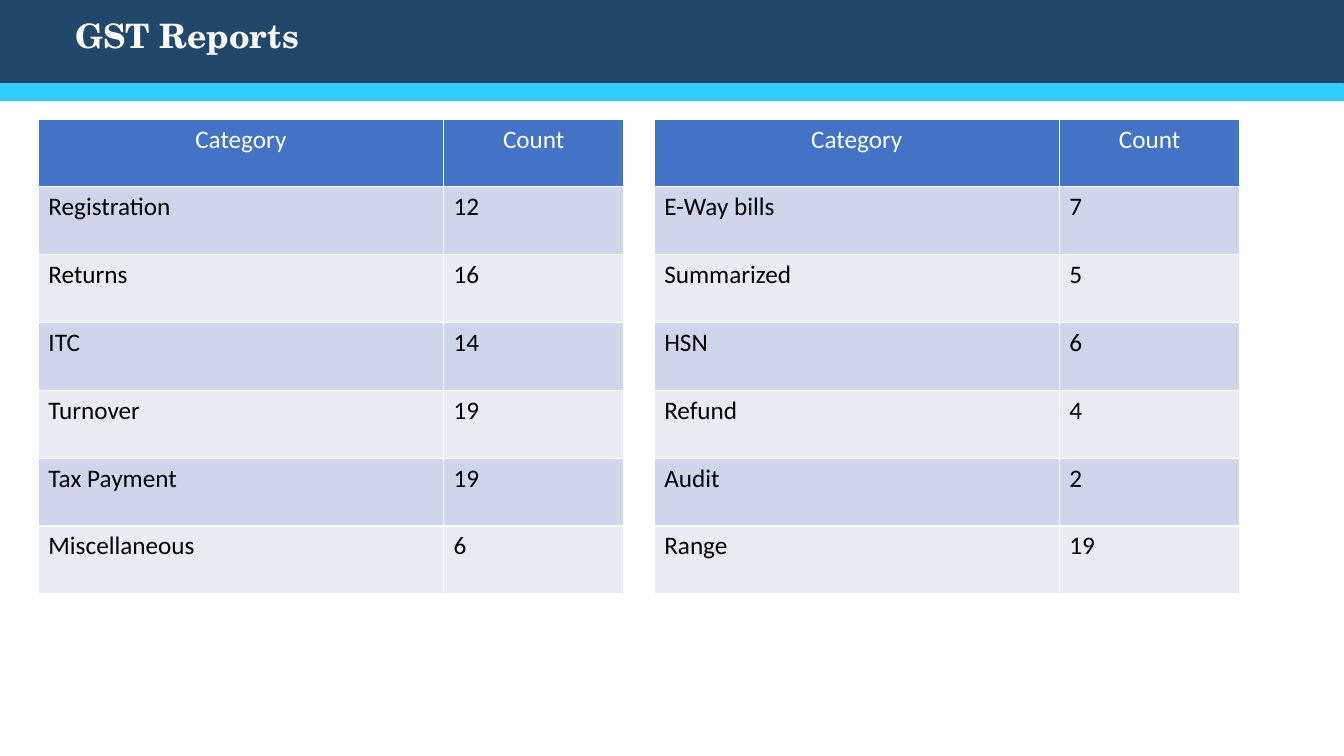
from pptx import Presentation
from pptx.dml.color import RGBColor
from pptx.enum.shapes import MSO_SHAPE
from pptx.enum.text import MSO_ANCHOR, PP_ALIGN
from pptx.util import Pt

NAVY = RGBColor(0x23, 0x47, 0x6B)
CYAN = RGBColor(0x33, 0xCC, 0xFF)
WHITE = RGBColor(0xFF, 0xFF, 0xFF)
BLACK = RGBColor(0x00, 0x00, 0x00)
HEADER_BLUE = RGBColor(0x44, 0x72, 0xC4)
BANDS = [RGBColor(0xE9, 0xEB, 0xF5), RGBColor(0xCF, 0xD5, 0xEA)]

COLUMN_WIDTHS = [289.4, 128.9]
ROW_HEIGHT = 48.45
TABLE_TOP = 85
HEADER = ("Category", "Count")
TABLES = [
    (27.4, [("Registration", 12), ("Returns", 16), ("ITC", 14),
            ("Turnover", 19), ("Tax Payment", 19), ("Miscellaneous", 6)]),
    (467.3, [("E-Way bills", 7), ("Summarized", 5), ("HSN", 6),
             ("Refund", 4), ("Audit", 2), ("Range", 19)]),
]

prs = Presentation()
prs.slide_width, prs.slide_height = Pt(960), Pt(540)
s = prs.slides.add_slide(prs.slide_layouts[6])

# Title band and the stripe below it
for left, top, width, height, color in [(-2, 0, 962, 60, NAVY),
                                        (0, 60, 960, 12, CYAN)]:
    sp = s.shapes.add_shape(MSO_SHAPE.RECTANGLE, Pt(left), Pt(top), Pt(width), Pt(height))
    sp.shadow.inherit = False
    sp.fill.solid()
    sp.fill.fore_color.rgb = color
    if color == CYAN:
        sp.line.color.rgb = color
        sp.line.width = Pt(0.75)
    else:
        sp.line.fill.background()

title = s.shapes.add_textbox(Pt(46.8), Pt(2.9), Pt(880), Pt(48.2))
tf = title.text_frame
tf.word_wrap = True
tf.vertical_anchor = MSO_ANCHOR.MIDDLE
tf.text = "GST Reports"
p = tf.paragraphs[0]
p.line_spacing = 0.9
r = p.runs[0]
r.font.name = "TeX Gyre Schola"
r.font.size = Pt(24)
r.font.bold = True
r.font.color.rgb = WHITE

# Report counts; the default table style draws the white borders
for left, counts in TABLES:
    rows = [HEADER] + counts
    table = s.shapes.add_table(len(rows), len(HEADER), Pt(left), Pt(TABLE_TOP),
                               Pt(sum(COLUMN_WIDTHS)), Pt(ROW_HEIGHT * len(rows))).table
    for column, width in zip(table.columns, COLUMN_WIDTHS):
        column.width = Pt(width)
    for i, values in enumerate(rows):
        table.rows[i].height = Pt(ROW_HEIGHT)
        is_header = i == 0
        for j, value in enumerate(values):
            cell = table.cell(i, j)
            cell.fill.solid()
            cell.fill.fore_color.rgb = HEADER_BLUE if is_header else BANDS[i % 2]
            p = cell.text_frame.paragraphs[0]
            p.text = str(value)
            p.alignment = PP_ALIGN.CENTER if is_header else PP_ALIGN.LEFT
            r = p.runs[0]
            r.font.name = "Calibri"
            r.font.size = Pt(18)
            r.font.bold = False
            r.font.color.rgb = WHITE if is_header else BLACK

prs.save("out.pptx")
